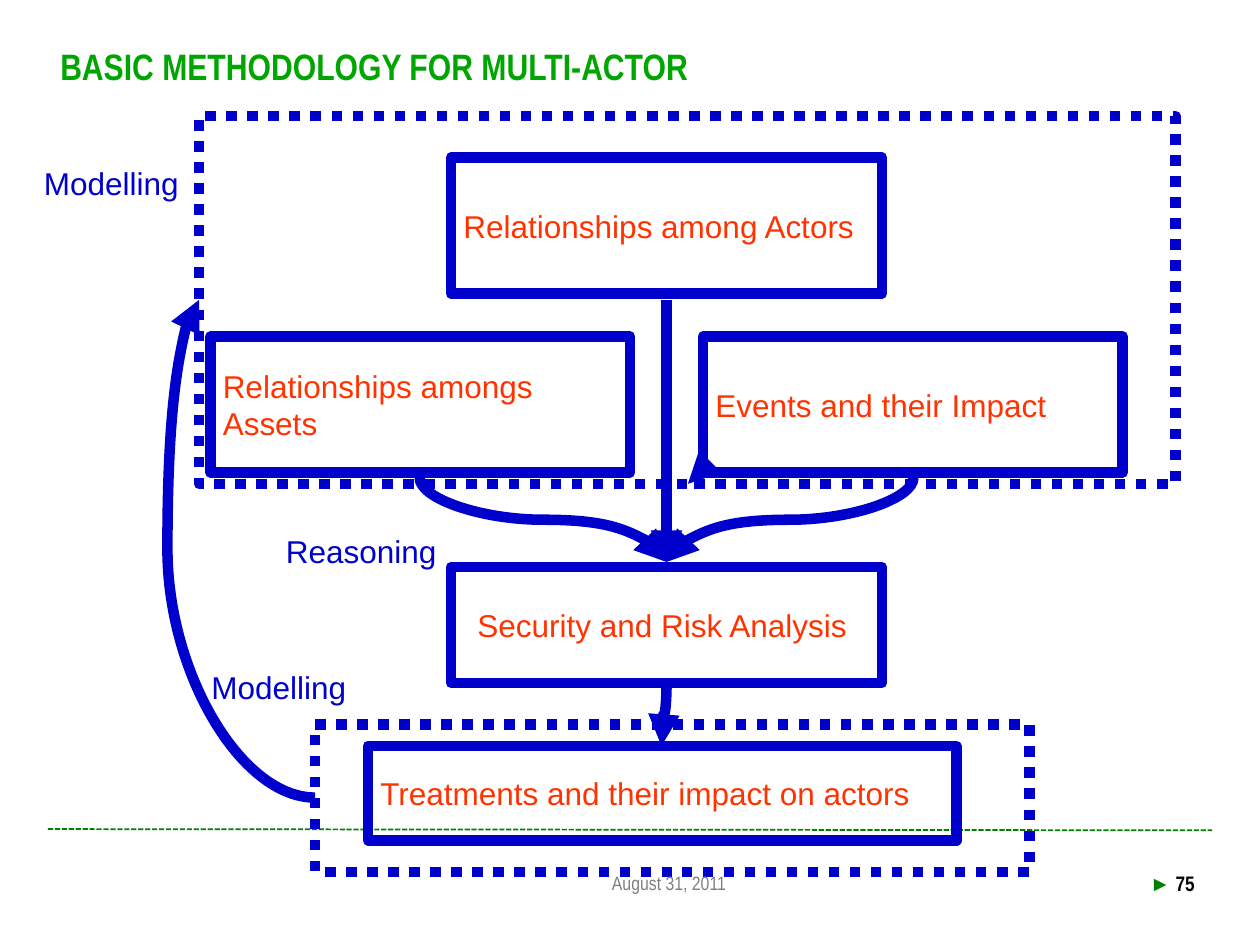
from lxml.etree import SubElement
from pptx import Presentation
from pptx.dml.color import RGBColor
from pptx.enum.dml import MSO_LINE
from pptx.enum.shapes import MSO_CONNECTOR, MSO_SHAPE
from pptx.enum.text import MSO_ANCHOR, PP_ALIGN
from pptx.oxml.ns import qn
from pptx.util import Inches, Pt

COLORS = {"blue": "0000CC", "orange": "FF3300", "title": "00A600",
          "green": "008000", "black": "000000", "gray": "7F7F7F"}
LEFT, CENTER, RIGHT = PP_ALIGN.LEFT, PP_ALIGN.CENTER, PP_ALIGN.RIGHT

# Content: text, alignment, (left, top, width, height)
BOXES = [
    ("Relationships amongs Assets", LEFT, (1.67, 2.67, 3.33, 1.08)),
    ("Relationships among Actors", LEFT, (3.58, 1.25, 3.42, 1.08)),
    ("Security and Risk Analysis ", CENTER, (3.58, 4.5, 3.42, 0.92)),
    ("Treatments and their impact on actors", LEFT, (2.92, 5.92, 4.67, 0.75)),
    ("Events and their Impact", LEFT, (5.58, 2.67, 3.33, 1.08)),
]
GROUP_FRAMES = [(1.58, 0.92, 7.75, 2.92), (2.5, 5.75, 5.67, 1.17)]
LABELS = [
    ("Modelling", (0.25, 1.25, 1.37, 0.4)),
    ("Modelling", (1.58, 5.25, 1.37, 0.4)),
    ("Reasoning", (2.17, 4.17, 1.48, 0.4)),
]
STRAIGHT_ARROWS = [(5.47, 3.83, 5.46, 3.84), (5.29, 2.38, 5.29, 4.46)]
# Curves: start, end, rotation, horizontal flip, bend (share of the width)
CURVED_ARROWS = [
    ((3.33, 3.79), (5.29, 4.46), 270, True, 0.5),
    ((5.29, 5.42), (5.25, 5.92), 90, False, 0.5),
    ((2.5, 6.33), (1.58, 2.38), 180, False, 1.273),
    ((7.25, 3.79), (5.29, 4.46), 90, False, 0.5),
]

presentation = Presentation()
presentation.slide_width, presentation.slide_height = Inches(10), Inches(7.5)
slide = presentation.slides.add_slide(presentation.slide_layouts[6])


def color(name):
    return RGBColor.from_string(COLORS[name])


def set_font(font, name, size, color_name, bold=False):
    font.name, font.size, font.bold = name, Pt(size), bold
    font.color.rgb = color(color_name)


def set_line(shape, color_name="blue", width=6, dash=None):
    shape.line.color.rgb = color(color_name)
    shape.line.width = Pt(width)
    if dash:
        shape.line.dash_style = dash


def add_text(text, place, font, align=LEFT, anchor=MSO_ANCHOR.TOP, wrap=True):
    box = slide.shapes.add_textbox(*map(Inches, place))
    box.text_frame.word_wrap = wrap
    box.text_frame.vertical_anchor = anchor
    paragraph = box.text_frame.paragraphs[0]
    paragraph.text, paragraph.alignment = text, align
    set_font(paragraph.font, *font)
    return paragraph


def add_rectangle(place, dash=None):
    shape = slide.shapes.add_shape(MSO_SHAPE.RECTANGLE, *map(Inches, place))
    shape.shadow.inherit = False
    shape.fill.background()
    set_line(shape, dash=dash)
    return shape


def add_line(kind, ends, arrow=True, **style):
    connector = slide.shapes.add_connector(kind, *map(Inches, ends))
    set_line(connector, **style)
    properties = connector._element.spPr
    if arrow:
        SubElement(properties.find(qn("a:ln")), qn("a:tailEnd"), type="triangle")
    SubElement(properties, qn("a:effectLst"))
    return connector


def add_curve(start, end, rotation, flip, bend):
    (x1, y1), (x2, y2) = start, end
    width, height = abs(x2 - x1), abs(y2 - y1)
    if rotation % 180:  # a quarter turn swaps the sides
        width, height = height, width
    left, top = (x1 + x2 - width) / 2, (y1 + y2 - height) / 2
    connector = add_line(MSO_CONNECTOR.CURVE, (left, top, left + width, top + height))
    properties = connector._element.spPr
    frame = properties.find(qn("a:xfrm"))
    frame.set("rot", str(rotation * 60000))
    if flip:
        frame.set("flipH", "1")
    guides = properties.find(qn("a:prstGeom")).find(qn("a:avLst"))
    SubElement(guides, qn("a:gd"), name="adj1", fmla=f"val {round(bend * 100000)}")


# Footer rule, page number and title
add_line(MSO_CONNECTOR.STRAIGHT, (0.38, 6.58, 9.62, 6.59), arrow=False,
         color_name="green", width=1, dash=MSO_LINE.SQUARE_DOT)
page = add_text("► ", (8.58, 6.81, 1, 0.4), ("Arial Narrow", 12, "green", True),
                RIGHT, MSO_ANCHOR.MIDDLE)
number = page.add_run()
number.text = "75"
number.font.color.rgb = color("black")
add_text("BASIC METHODOLOGY FOR MULTI-ACTOR", (0.38, 0.3, 9.25, 0.7),
         ("Arial Narrow", 21, "title", True))

# Boxes and dotted group frames
for text, align, place in BOXES:
    frame = add_rectangle(place).text_frame
    frame.word_wrap, frame.vertical_anchor = True, MSO_ANCHOR.MIDDLE
    paragraph = frame.paragraphs[0]
    paragraph.text, paragraph.alignment = text, align
    set_font(paragraph.font, "Arial", 18, "orange")
for place in GROUP_FRAMES:
    add_rectangle(place, MSO_LINE.ROUND_DOT)

# Phase labels
for text, place in LABELS:
    add_text(text, place, ("Arial", 18, "blue"), wrap=False)

# Arrows
for ends in STRAIGHT_ARROWS:
    add_line(MSO_CONNECTOR.STRAIGHT, ends)
for curve in CURVED_ARROWS:
    add_curve(*curve)

# Date
add_text("August 31, 2011", (4.62, 6.81, 1.38, 0.4), ("Arial Narrow", 11, "gray"),
         CENTER, MSO_ANCHOR.MIDDLE)

presentation.save("out.pptx")
